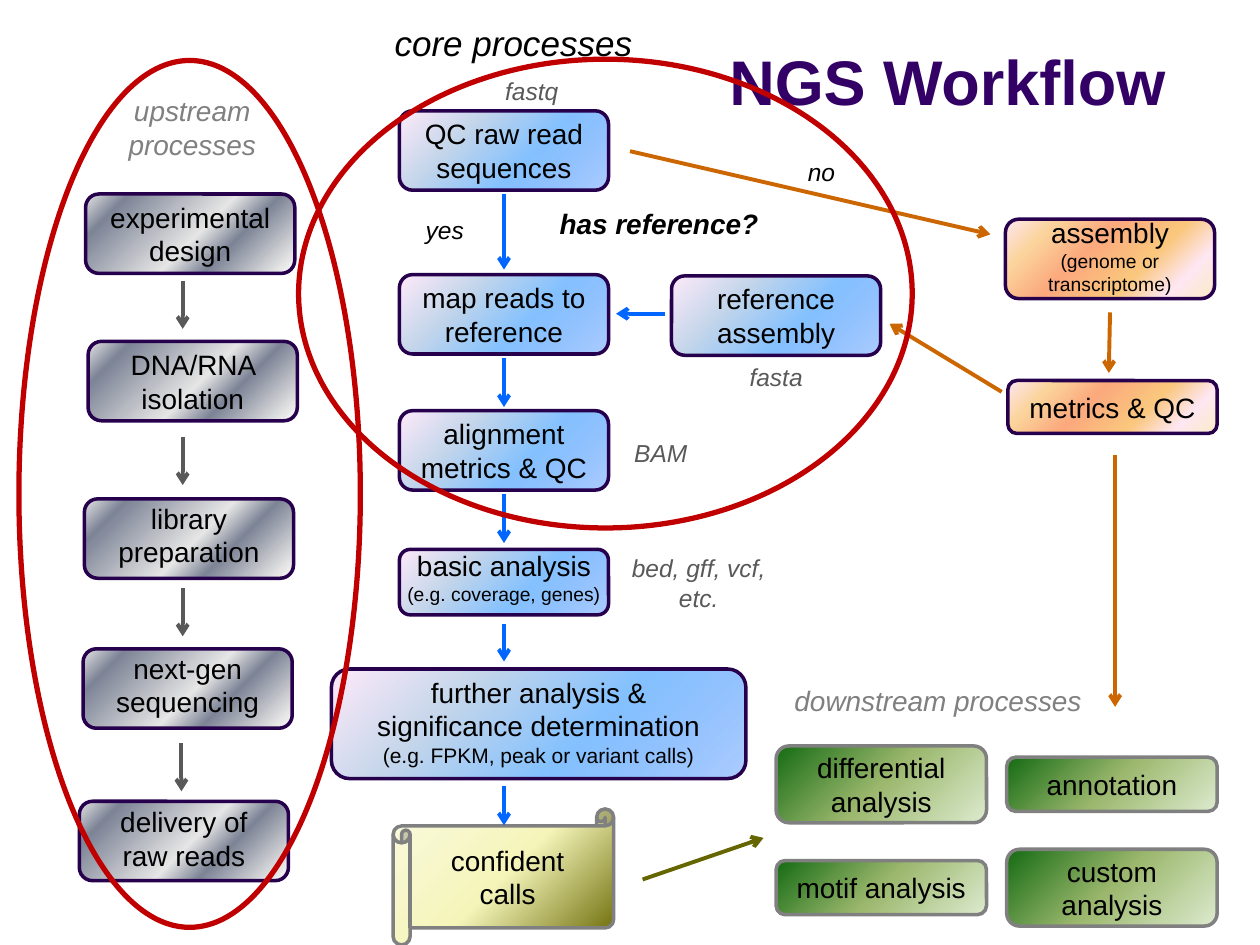
from dataclasses import dataclass

from lxml import etree
from pptx import Presentation
from pptx import util as u
from pptx.dml.color import RGBColor
from pptx.enum import shapes, text
from pptx.oxml import ns

COLUMNS, ROWS, CELL = 100, 75, 0.1
BLACK = RGBColor(0x00, 0x00, 0x00)
GRAY = RGBColor(0x80, 0x80, 0x80)
DARK_GRAY = RGBColor(0x59, 0x59, 0x59)
PURPLE = RGBColor(0x33, 0x00, 0x66)
INDIGO = RGBColor(0x26, 0x00, 0x4D)
BLUE = RGBColor(0x00, 0x66, 0xFF)
ORANGE = RGBColor(0xCC, 0x66, 0x00)
OLIVE = RGBColor(0x66, 0x66, 0x00)
RED = RGBColor(0xC0, 0x00, 0x00)


def ramp(*stops):
    """Turn (percent, hex) pairs into gradient stops."""
    return [(percent, RGBColor.from_string(color)) for percent, color in stops]


SKY = ramp((0, "5E9EFF"), (40, "85C2FF"), (70, "C4D6EB"), (100, "FFEBFA"))
STEEL = ramp((0, "FFFFFF"), (7, "E6E6E6"), (32, "7D8496"),
             (47, "E6E6E6"), (85, "7D8496"), (100, "E6E6E6"))
PEACH = ramp((0, "FBEAC7"), (18, "FEE7F2"), (36, "FAC77D"),
             (61, "FBA97D"), (82, "FBD49C"), (100, "FEE7F2"))
LEAF = ramp((0, "DDEBCF"), (50, "9CB86E"), (100, "156B13"))
PARCHMENT = ramp((0, "666600"), (50, "F5F5BA"), (100, "F9F9DE"))

NOTE = {"size": u.Pt(14), "italic": True, "color": DARK_GRAY}
ANSWER = {**NOTE, "color": BLACK}
STAGE = {"size": u.Pt(16), "italic": True, "color": GRAY}
QUESTION = {**STAGE, "bold": True, "color": BLACK}
CORE_STAGE = {**STAGE, "size": u.Pt(20), "color": BLACK}
TITLE = {"size": u.Pt(36), "bold": True, "color": PURPLE}


def cells(count):
    """Convert grid cells to a length."""
    return u.Inches(count * CELL)


@dataclass
class Box:
    """A rectangle in grid columns and rows."""
    left: float
    top: float
    width: float
    height: float

    def inner(self, left, top, width, height):
        """Return a box placed relative to this one."""
        return Box(self.left + left, self.top + top, width, height)

    def frame(self):
        """Return the four lengths of the box."""
        return [cells(n) for n in (self.left, self.top, self.width, self.height)]


def assign(target, values):
    """Set each named attribute of the target."""
    for name, value in values.items():
        setattr(target, name, value)


def write(frame, lines, side=1, rise=0):
    """Fill a text frame with centred (text, format) lines."""
    assign(frame, {"word_wrap": True, "vertical_anchor": text.MSO_ANCHOR.MIDDLE,
                   "margin_left": cells(side), "margin_right": cells(side),
                   "margin_top": 0, "margin_bottom": cells(2 * rise)})
    for index, (words, style) in enumerate(lines):
        para = frame.add_paragraph() if index else frame.paragraphs[0]
        para.alignment = text.PP_ALIGN.CENTER
        span = para.add_run()
        span.text = words
        values = dict(style)
        span.font.color.rgb = values.pop("color")
        assign(span.font, {"name": "Arial", **values})


def add_label(page, box, words, style):
    """Add a centred free-standing caption."""
    label = page.shapes.add_textbox(*box.frame())
    write(label.text_frame, [(words, style)])


def shade(shape, stops):
    """Give a shape a diagonal gradient with the stops."""
    shape.fill.gradient()
    shape.fill.gradient_angle = 135
    stop_list = next(shape.element.iter(ns.qn("a:gsLst")))
    for stop in list(stop_list):
        stop_list.remove(stop)
    for percent, color in stops:
        stop = etree.SubElement(stop_list, ns.qn("a:gs"), pos=str(percent * 1000))
        tint = etree.SubElement(stop, ns.qn("a:srgbClr"), val=str(color))
        if stops is SKY and percent == 0:
            etree.SubElement(tint, ns.qn("a:alpha"), val="50000")


def add_card(page, box, lines, stops, edge=INDIGO, side=1.2, rise=0,
             form=shapes.MSO_SHAPE.ROUNDED_RECTANGLE):
    """Add a gradient step with (text, size) lines."""
    card = page.shapes.add_shape(form, *box.frame())
    card.shadow.inherit = False
    shade(card, stops)
    card.line.color.rgb = edge
    card.line.width = u.Pt(2)
    styled = [(words, {"size": u.Pt(size), "color": BLACK}) for words, size in lines]
    write(card.text_frame, styled, side, rise)


def add_ring(page, box):
    """Add the red outline around a region."""
    ring = page.shapes.add_shape(shapes.MSO_SHAPE.OVAL, *box.frame())
    ring.shadow.inherit = False
    ring.fill.background()
    ring.line.color.rgb = RED
    ring.line.width = u.Pt(3)


def add_arrow(page, box, start, end, color):
    """Add an arrow between two points relative to the box."""
    points = [cells(n) for x, y in (start, end) for n in (box.left + x, box.top + y)]
    arrow = page.shapes.add_connector(shapes.MSO_CONNECTOR.STRAIGHT, *points)
    arrow.line.color.rgb = color
    arrow.line.width = u.Pt(2.25)
    outline = next(arrow.element.iter(ns.qn("a:ln")))
    etree.SubElement(outline, ns.qn("a:tailEnd"), type="arrow")
    etree.SubElement(arrow.element.spPr, ns.qn("a:effectLst"))


def draw_downstream(page, box):
    """Draw the downstream analyses."""
    add_label(page, box.inner(10.3, 0, 26.3, 3.7), "downstream processes", STAGE)
    for left, top, height, lines in (
            (10.6, 5.5, 6.1, ["differential analysis"]),
            (28.9, 6.4, 4.3, ["annotation"]),
            (10.6, 14.6, 4.3, ["motif analysis"]),
            (28.9, 13.7, 6.1, ["custom", "analysis"])):
        add_card(page, box.inner(left, top, 16.7, height),
                 [(line, 16) for line in lines], LEAF, GRAY)
    add_arrow(page, box, (0, 16.1), (9.6, 12.8), OLIVE)


def draw_assembly(page, box):
    """Draw the branch taken without a reference."""
    add_card(page, box.inner(29.8, 5.5, 16.6, 6.3),
             [("assembly", 16), ("(genome or transcriptome)", 11)], PEACH, rise=0.3)
    add_card(page, box.inner(30, 18.3, 16.6, 4.2), [("metrics & QC", 16)], PEACH)
    for start, end in (((0, 0.1), (28.6, 6.7)), ((38.1, 12.9), (38, 17.7)),
                       ((38.5, 24.2), (38.5, 44.2)), ((29.5, 19.2), (20.6, 13.8))):
        add_arrow(page, box, start, end, ORANGE)
    add_label(page, box.inner(11.3, 0, 7.8, 3.4), "no", ANSWER)


def draw_analysis(page, box):
    """Draw the steps from basic analysis to confident calls."""
    add_card(page, box.inner(5.4, 4.4, 16.6, 5.2),
             [("basic analysis", 16), ("(e.g. coverage, genes)", 11)],
             SKY, side=0, rise=0.4)
    add_card(page, box.inner(0, 13.9, 32.9, 8.7),
             [("further analysis & significance determination", 16),
              ("(e.g. FPKM, peak or variant calls)", 12)], SKY, side=2.5, rise=0.2)
    add_card(page, box.inner(4.9, 25, 17.5, 10.8), [("confident calls", 16)],
             PARCHMENT, GRAY, side=2, form=shapes.MSO_SHAPE.HORIZONTAL_SCROLL)
    for top, bottom in ((0, 3.9), (10.3, 13.3), (23.2, 26.3)):
        add_arrow(page, box, (13.7, top), (13.7, bottom), BLUE)
    add_label(page, box.inner(21.6, 4.2, 15.1, 5.7), "bed, gff, vcf, etc.", NOTE)


def draw_upstream(page, box):
    """Draw the laboratory steps inside their ring."""
    add_label(page, box.inner(4.3, 2.1, 18.9, 6.4), "upstream processes", STAGE)
    for left, top, rise, words in (
            (5.3, 10.6, 0, "experimental design"),
            (5.5, 22.3, 0, "DNA/RNA isolation"),
            (5.2, 34.8, 0.3, "library preparation"),
            (5.1, 46.7, 0.3, "next-gen sequencing"),
            (4.8, 58.8, 0.2, "delivery of raw reads")):
        add_card(page, box.inner(left, top, 16.6, 6.3), [(words, 16)], STEEL, rise=rise)
    for left, top in ((13, 17.5), (13, 29.9), (13, 41.9), (12.9, 54.2)):
        add_arrow(page, box, (left, top), (left, top + 3.8), DARK_GRAY)
    add_ring(page, box)


def draw_core(page, box):
    """Draw the mapping steps inside their ring."""
    for left, top, words in ((8, 4.1, "QC raw read sequences"),
                             (8, 17.1, "map reads to reference"),
                             (8, 27.9, "alignment metrics & QC"),
                             (29.6, 17.2, "reference assembly")):
        add_card(page, box.inner(left, top, 16.6, 6.3), [(words, 16)], SKY)
    for start, end in (((16.3, 10.7), (16.3, 16.7)), ((16.3, 23.7), (16.3, 27.6)),
                       ((29.1, 20.2), (25.2, 20.2))):
        add_arrow(page, box, start, end, BLUE)
    for place, words, style in (
            ((6, -3.5, 22.1, 4.4), "core processes", CORE_STAGE),
            ((12.3, 0.8, 12.4, 3.4), "fastq", NOTE),
            ((31.7, 23.5, 12.4, 3.4), "fasta", NOTE),
            ((22.9, 29.5, 11.7, 3.4), "BAM", NOTE),
            ((18.6, 11.2, 20, 3.7), "has reference?", QUESTION),
            ((7.7, 11.8, 7.8, 3.4), "yes", ANSWER)):
        add_label(page, box.inner(*place), words, style)
    add_ring(page, box)


def main():
    """Build and save the workflow slide."""
    deck = Presentation()
    assign(deck, {"slide_width": cells(COLUMNS), "slide_height": cells(ROWS)})
    page = deck.slides.add_slide(deck.slide_layouts[6])
    add_label(page, Box(50.4, 2.3, 49.6, 8.2), "NGS Workflow", TITLE)
    draw_downstream(page, Box(51, 53.7, 45.7, 19.8))
    draw_assembly(page, Box(50, 11.9, 46.6, 44.2))
    draw_analysis(page, Box(26.3, 39.2, 36.7, 35.8))
    draw_upstream(page, Box(1.5, 4.8, 27.1, 68.8))
    draw_core(page, Box(23.7, 4.7, 48.7, 37.2))
    deck.save("out.pptx")


if __name__ == "__main__":
    main()
